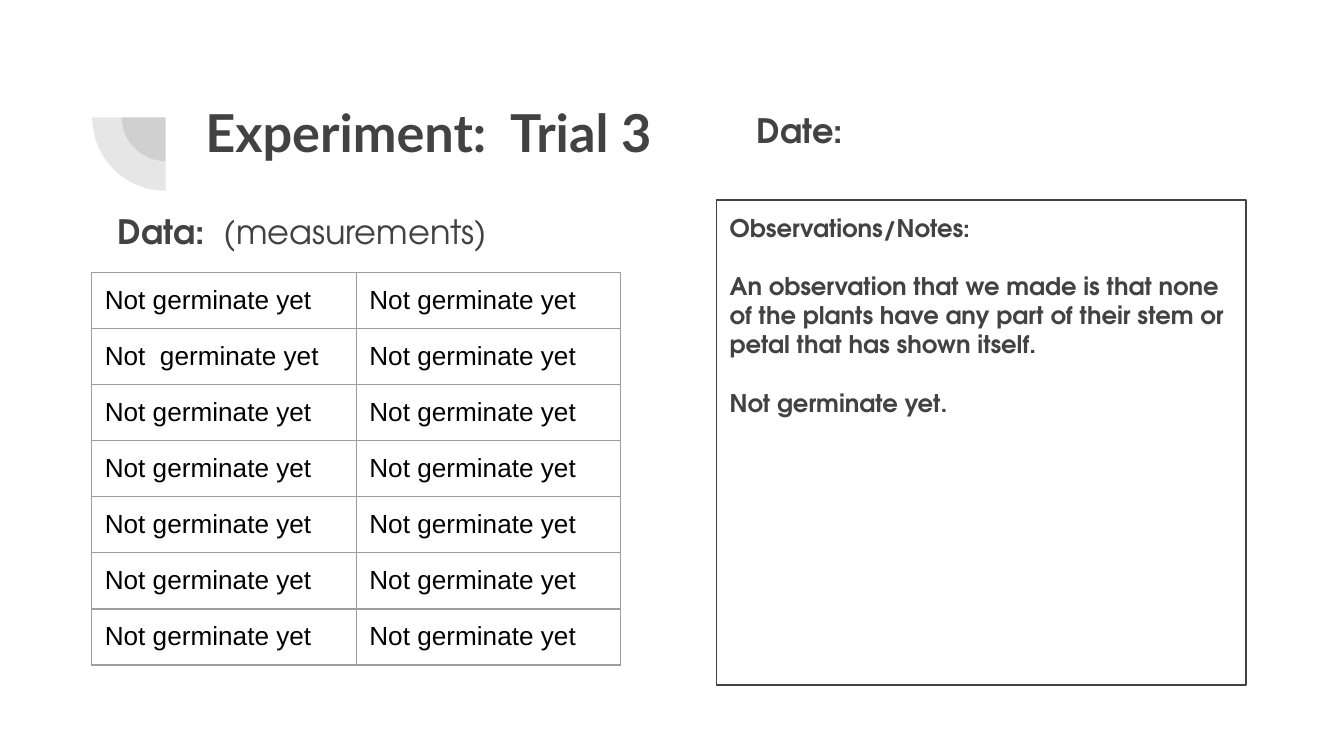
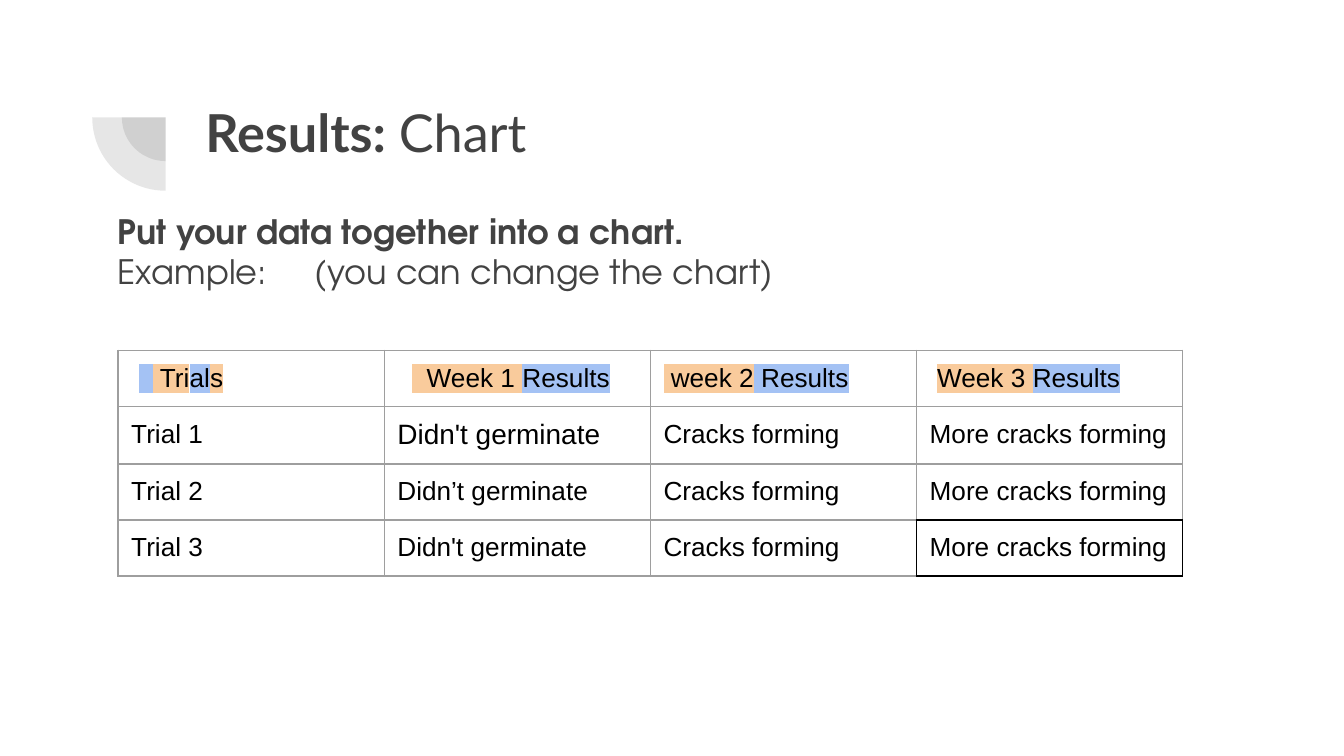
from dataclasses import dataclass

from lxml import etree
from pptx import Presentation
from pptx import util as u
from pptx.dml.color import RGBColor
from pptx.enum import shapes, text
from pptx.oxml.ns import qn

INK, GREY, BLACK = "424242", "9E9E9E", "000000"
BLUE, PEACH = "A4C2F4", "F9CB9C"
HEAD, BODY, CELL = "Lato", "TeX Gyre Adventor", "Arial"
EDGES = "LRTB"


@dataclass
class Run:
    txt: str
    bold: bool = False
    mark: str = None
    size: float = None


@dataclass
class Para:
    runs: list
    gap: float = 0
    dent: float = 0
    tab: float = 0


def rgb(code):
    return RGBColor.from_string(code)


def node(up, tag, **attrs):
    return etree.SubElement(up, qn(tag), {k: str(v) for k, v in attrs.items()})


class Deck:
    def __init__(self):
        self.prs = Presentation()
        self.prs.slide_width = u.Cm(25.4)
        self.prs.slide_height = u.Cm(14.29)
        self.slide = None

    def page(self, runs):
        self.slide = self.prs.slides.add_slide(self.prs.slide_layouts[5])
        title = self.slide.shapes.title
        title.left, title.top = u.Cm(3.63), u.Cm(1.65)
        title.width, title.height = u.Cm(19.53), u.Cm(2.77)
        self.block(title.text_frame, [Para(runs)], 28, HEAD)
        for size in (1.65, 2.77):
            title._element.addprevious(self.pie(3.13, 2.22, size)._element)

    def pie(self, x, y, size):
        pie = self.slide.shapes.add_shape(
            shapes.MSO_SHAPE.PIE, u.Cm(x - size / 2), u.Cm(y - size / 2),
            u.Cm(size), u.Cm(size))
        pie.adjustments[0], pie.adjustments[1] = 107.93, 162
        pie.rotation = 270
        pie.shadow.inherit = False
        pie.fill.solid()
        pie.fill.fore_color.rgb = rgb(INK)
        tint = pie._element.spPr.find(qn("a:solidFill"))[0]
        node(tint, "a:alpha", val=13000)
        pie.line.fill.background()
        return pie

    def block(self, frame, paras, size, font, tone=INK):
        frame.word_wrap = True
        frame.auto_size = text.MSO_AUTO_SIZE.NONE
        frame.vertical_anchor = text.MSO_ANCHOR.TOP
        frame.margin_left = frame.margin_right = u.Cm(0.25)
        frame.margin_top = frame.margin_bottom = u.Cm(0.25)
        self.lines(frame, paras, size, font, tone)

    def lines(self, frame, paras, size, font, tone):
        for i, para in enumerate(paras):
            p = frame.add_paragraph() if i else frame.paragraphs[0]
            p.alignment = text.PP_ALIGN.LEFT
            if para.gap:
                p.space_before = u.Pt(para.gap)
            props = p._p.get_or_add_pPr()
            if para.dent:
                props.set("marL", str(u.Cm(para.dent)))
            if para.tab:
                stops = node(props, "a:tabLst")
                node(stops, "a:tab", pos=u.Cm(para.tab), algn="l")
            for run in para.runs:
                self.run(p, run, size, font, tone)

    def run(self, p, run, size, font, tone):
        r = p.add_run()
        r.text = run.txt
        r.font.size = u.Pt(run.size or size)
        r.font.bold = run.bold
        r.font.color.rgb = rgb(tone)
        r.font.name = font
        if run.mark:
            props = r._r.rPr
            mark = node(props, "a:highlight")
            node(mark, "a:srgbClr", val=run.mark)
            props.find(qn("a:latin")).addprevious(mark)

    def label(self, x, y, w, h, paras):
        box = self.slide.shapes.add_textbox(u.Cm(x), u.Cm(y), u.Cm(w), u.Cm(h))
        self.block(box.text_frame, paras, 18, BODY)

    def panel(self, x, y, w, h, paras):
        box = self.slide.shapes.add_shape(
            shapes.MSO_SHAPE.RECTANGLE, u.Cm(x), u.Cm(y), u.Cm(w), u.Cm(h))
        box.shadow.inherit = False
        box.fill.background()
        box.line.color.rgb = rgb(INK)
        box.line.width = u.Pt(0.75)
        self.block(box.text_frame, paras, 13, BODY)

    def table(self, x, y, wide, high, rows):
        count, cols = len(rows), len(rows[0])
        grid = self.slide.shapes.add_table(
            count, cols, u.Cm(x), u.Cm(y),
            u.Cm(wide * cols), u.Cm(high * count)).table
        grid.first_row = grid.horz_banding = False
        for col in grid.columns:
            col.width = u.Cm(wide)
        for i, row in enumerate(rows):
            grid.rows[i].height = u.Cm(high)
            for j, item in enumerate(row):
                cell = grid.cell(i, j)
                if isinstance(item, str):
                    item = Para([Run(item)])
                cell.margin_left = cell.margin_right = u.Cm(0.25)
                cell.margin_top = cell.margin_bottom = u.Cm(0.25)
                self.lines(cell.text_frame, [item], 14, CELL, BLACK)
                cell.fill.background()
                for edge in EDGES:
                    self.edge(cell, edge)
        return grid

    def edge(self, cell, edge, tone=GREY):
        props = cell._tc.get_or_add_tcPr()
        old = props.find(qn("a:ln" + edge))
        if old is not None:
            props.remove(old)
        line = node(props, "a:ln" + edge, w=u.Pt(0.75))
        node(node(line, "a:solidFill"), "a:srgbClr", val=tone)
        props.insert(EDGES.index(edge), line)

    def frame(self, grid, i, j):
        sides = [(i, j, edge) for edge in EDGES]
        for row, col, edge in sides + [(i - 1, j, "B"), (i, j - 1, "R")]:
            self.edge(grid.cell(row, col), edge, BLACK)


def trial(deck):
    deck.page([Run("Experiment:  Trial 3", True)])
    notes = ["Observations/Notes:",
             "An observation that we made is that none of the plants have "
             "any part of their stem or petal that has shown itself.",
             "Not germinate yet."]
    deck.panel(13.54, 3.78, 10.01, 9.17,
               [Para([Run(note, True)], gap=15.6 if i else 0)
                for i, note in enumerate(notes)])
    deck.label(1.98, 3.73, 10.72, 1.14,
               [Para([Run("Data:  ", True), Run("(measurements)")])])
    rows = [["Not germinate yet"] * 2 for _ in range(7)]
    rows[1][0] = "Not  germinate yet"
    deck.table(1.73, 5.15, 5, 1.06, rows)
    deck.label(14.05, 1.83, 10.72, 1.14, [Para([Run("Date:", True)])])


def results(deck):
    deck.page([Run("Results: ", True), Run("Chart")])
    deck.label(1.98, 3.73, 21.44, 2.06, [
        Para([Run("Put your data together into a chart.", True)]),
        Para([Run("Example:\t(you can change the chart)")], tab=3.72)])
    heads = [
        Para([Run("  ", mark=BLUE), Run(" Tri", mark=PEACH),
              Run("al", mark=BLUE), Run("s", mark=PEACH)], dent=0.14),
        Para([Run("  Week 1 ", mark=PEACH), Run("Results", mark=BLUE)],
             dent=0.28),
        Para([Run(" week 2", mark=PEACH), Run(" Results", mark=BLUE)]),
        Para([Run("Week 3 ", mark=PEACH), Run("Results", mark=BLUE)],
             dent=0.14)]
    firsts = [Para([Run("Didn't germinate", size=15)]),
              "Didn’t germinate", "Didn't germinate"]
    rows = [[f"Trial {n}", first, "Cracks forming", "More cracks forming"]
            for n, first in enumerate(firsts, 1)]
    grid = deck.table(2.23, 6.62, 5.03, 1.06, [heads] + rows)
    deck.frame(grid, 3, 3)


def main():
    deck = Deck()
    trial(deck)
    results(deck)
    deck.prs.save("out.pptx")


if __name__ == "__main__":
    main()
